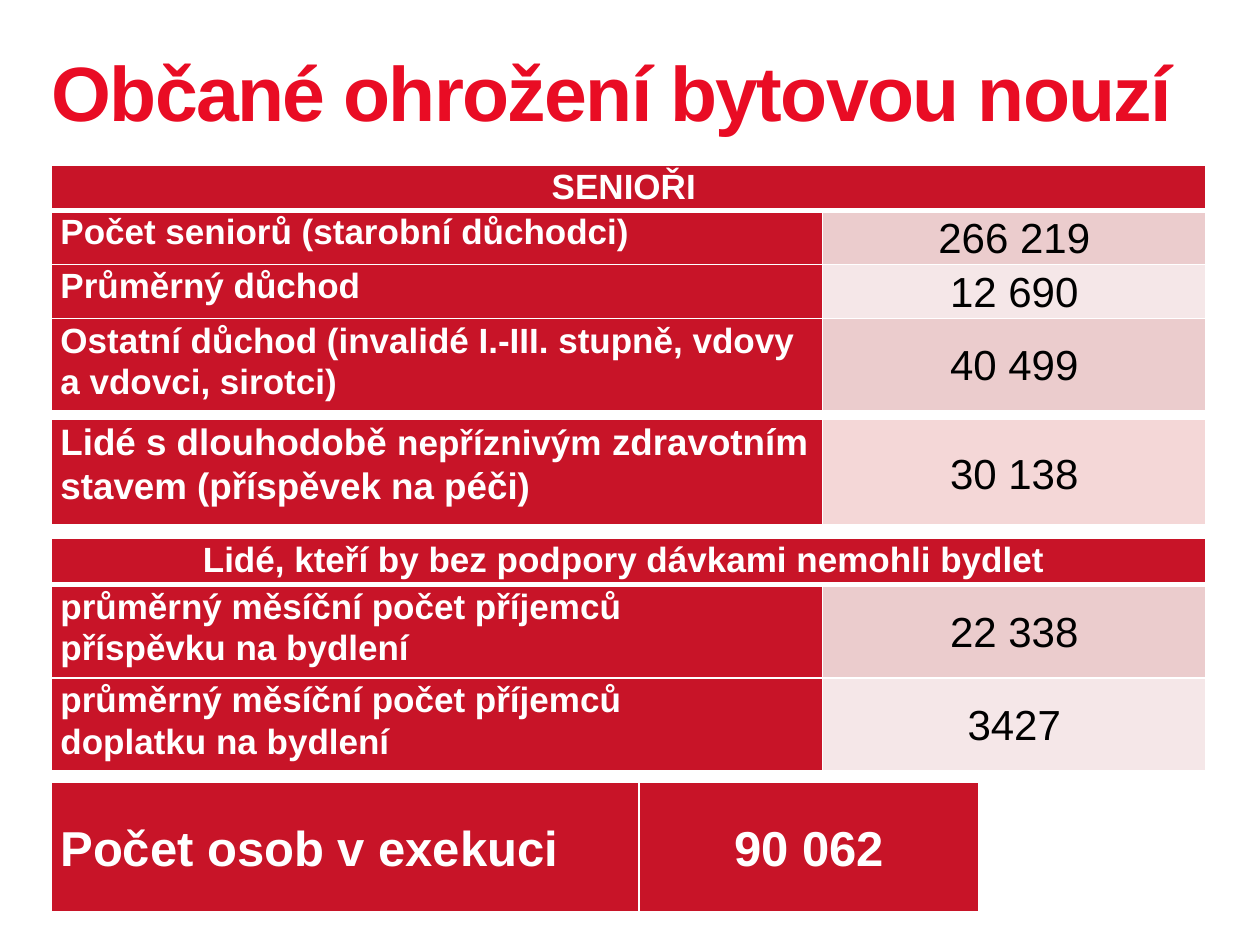
import pptx
import pptx.dml.color
import pptx.enum.text
import pptx.oxml
import pptx.oxml.ns
import pptx.util
from pptx.util import Inches, Pt

RED, WHITE, BLACK = "C81428", "FFFFFF", "000000"
DARK_BAND, LIGHT_BAND, CARE_BAND = "EBCCCD", "F5E7E8", "F4D7D7"
LEFT = 0.41
WIDE = (6.12, 3.04)

# Content: a label is a list of (text, size) runs; a value is (text, fill)
TITLE = "Občané ohrožení bytovou nouzí"
TABLES = [
    {"top": 6.21, "columns": (4.66, 2.7), "heights": (1.04,), "header": None,
     "middle": True, "value_size": 28, "value_color": WHITE, "bold": True,
     "rows": [([("Počet osob v exekuci", 28)], ("90 062", RED))]},
    {"top": 1.31, "columns": WIDE, "heights": (0.36, 0.43, 0.43, 0.73),
     "header": "SENIOŘI ",
     "rows": [
         ([("Počet seniorů (starobní důchodci)", 20)], ("266 219", DARK_BAND)),
         ([("Průměrný důchod", 20)], ("12 690", LIGHT_BAND)),
         ([("Ostatní důchod (invalidé I.-III. stupně, vdovy a vdovci, sirotci)", 20)],
          ("40 499", DARK_BAND))]},
    {"top": 3.33, "columns": WIDE, "heights": (0.85,), "header": None,
     "rows": [([("Lidé s dlouhodobě ", 21), ("nepříznivým", 20),
                (" zdravotním stavem (příspěvek na péči)", 21)],
               ("30 138", CARE_BAND))]},
    {"top": 4.27, "columns": WIDE, "heights": (0.37, 0.74, 0.74),
     "header": "Lidé, kteří by bez podpory dávkami nemohli bydlet ",
     "rows": [
         ([("průměrný měsíční počet příjemců \npříspěvku na bydlení", 20)],
          ("22 338", DARK_BAND)),
         ([("průměrný měsíční počet příjemců \ndoplatku na bydlení", 20)],
          ("3427", LIGHT_BAND))]},
]


def rgb(color):
    return pptx.dml.color.RGBColor.from_string(color)


def add_span(para, text, size, color, bold):
    for index, line in enumerate(text.split("\n")):
        if index:
            para.add_line_break()
        span = para.add_run()
        span.text = line
        span.font.name = "Arial"
        span.font.size = Pt(size)
        span.font.bold = bold
        span.font.color.rgb = rgb(color)
    return span


def set_borders(cell, bottom):
    properties = cell._tc.get_or_add_tcPr()
    for index, (side, width) in enumerate(
            (("L", 1), ("R", 1), ("T", 1), ("B", bottom))):
        properties.insert(index, pptx.oxml.parse_xml(
            f'<a:ln{side} {pptx.oxml.ns.nsdecls("a")} w="{Pt(width)}">'
            f'<a:solidFill><a:srgbClr val="{WHITE}"/></a:solidFill></a:ln{side}>'))


def fill_cell(cell, spans, fill, color=WHITE, bold=True, centred=False,
              middle=False, bottom=1):
    cell.margin_left = cell.margin_right = Inches(0.07)
    cell.margin_top = cell.margin_bottom = 0
    anchors = pptx.enum.text.MSO_ANCHOR
    cell.vertical_anchor = anchors.MIDDLE if middle else anchors.TOP
    cell.fill.solid()
    cell.fill.fore_color.rgb = rgb(fill)
    set_borders(cell, bottom)
    para = cell.text_frame.paragraphs[0]
    para.line_spacing = 1.07
    aligns = pptx.enum.text.PP_ALIGN
    para.alignment = aligns.CENTER if centred else aligns.LEFT
    for text, size in spans:
        add_span(para, text, size, color, bold)


def add_table(slide, data):
    columns, heights = data["columns"], data["heights"]
    table = slide.shapes.add_table(
        len(heights), len(columns), Inches(LEFT), Inches(data["top"]),
        Inches(sum(columns)), Inches(sum(heights))).table
    for column, width in zip(table.columns, columns):
        column.width = Inches(width)
    for row, height in zip(table.rows, heights):
        row.height = Inches(height)

    # Header row across both columns
    first = 0
    if data["header"]:
        first = 1
        table.cell(0, 0).merge(table.cell(0, 1))
        fill_cell(table.cell(0, 0), [(data["header"], 20)], RED,
                  centred=True, bottom=3)
        fill_cell(table.cell(0, 1), [], RED, bottom=3)

    # Label and value rows
    bottom = 1 if data["header"] else 3
    for index, (label, (value, band)) in enumerate(data["rows"], first):
        fill_cell(table.cell(index, 0), label, RED,
                  middle=data.get("middle", False), bottom=bottom)
        fill_cell(table.cell(index, 1), [(value, data.get("value_size", 24))], band,
                  color=data.get("value_color", BLACK),
                  bold=data.get("bold", False),
                  centred=True, middle=True, bottom=bottom)


def add_title(slide):
    box = slide.shapes.title
    box.left, box.top = Inches(LEFT), Inches(0.32)
    box.width, box.height = Inches(9.16), Inches(1.37)
    frame = box.text_frame
    frame.margin_left = frame.margin_right = 0
    frame.margin_top = frame.margin_bottom = 0
    frame.vertical_anchor = pptx.enum.text.MSO_ANCHOR.TOP
    frame.auto_size = pptx.enum.text.MSO_AUTO_SIZE.NONE
    frame.word_wrap = True
    para = frame.paragraphs[0]
    para.alignment = pptx.enum.text.PP_ALIGN.LEFT
    para.line_spacing = Pt(55)
    span = add_span(para, TITLE, 44, "E90C24", True)
    span.font._element.set("spc", "-100")


def main():
    deck = pptx.Presentation()
    deck.slide_width, deck.slide_height = Inches(10), Inches(7.5)
    slide = deck.slides.add_slide(deck.slide_layouts.get_by_name("Title Only"))
    add_title(slide)
    for data in TABLES:
        add_table(slide, data)
    deck.save("out.pptx")


if __name__ == "__main__":
    main()
